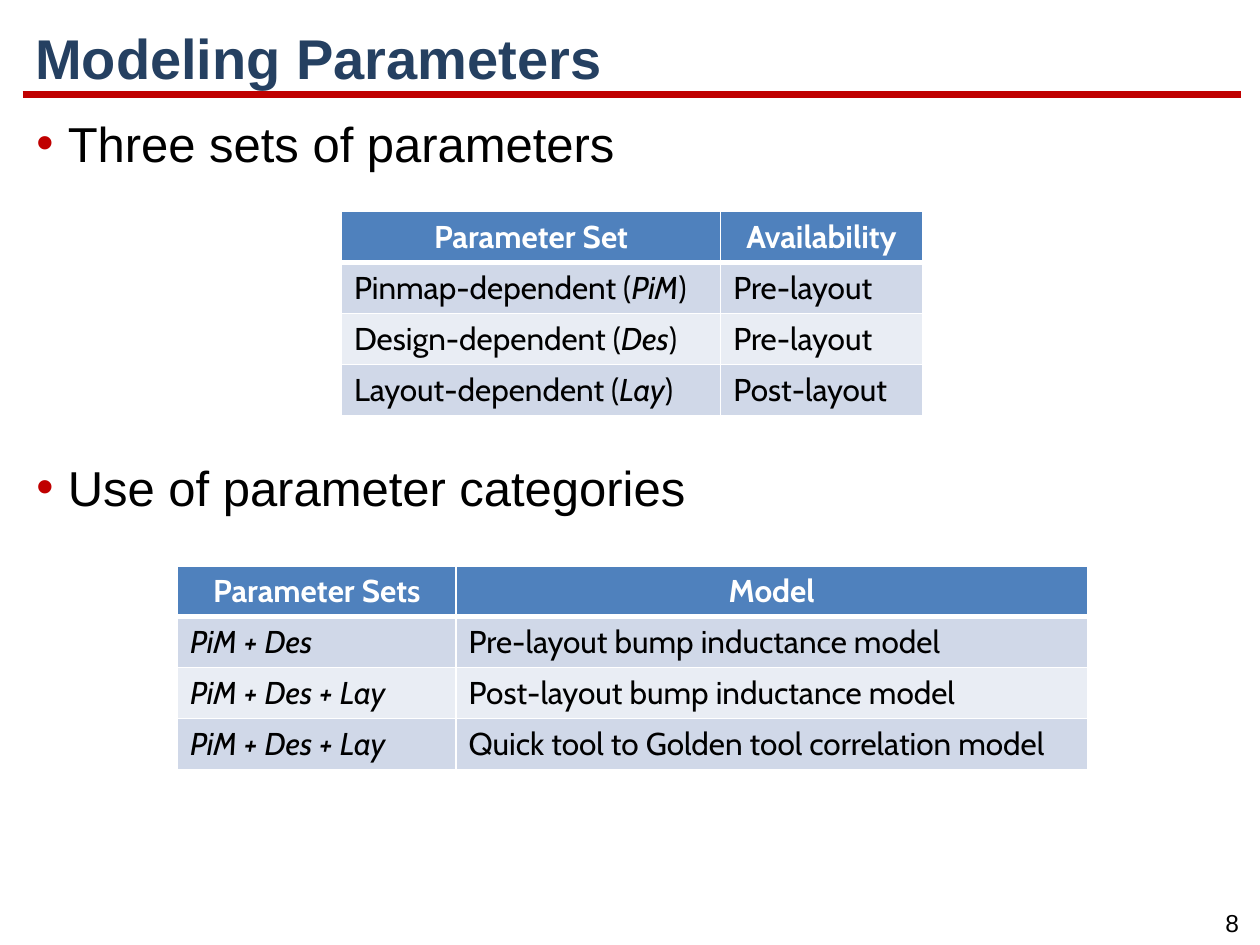
from lxml.etree import SubElement
from pptx import Presentation
from pptx.dml.color import RGBColor
from pptx.enum.shapes import MSO_CONNECTOR
from pptx.enum.text import MSO_ANCHOR, PP_ALIGN
from pptx.oxml.ns import qn
from pptx.util import Inches, Pt

NAVY = RGBColor(0x25, 0x40, 0x61)
RED = RGBColor(0xC0, 0x00, 0x00)
BLACK = RGBColor(0x00, 0x00, 0x00)
WHITE = RGBColor(0xFF, 0xFF, 0xFF)
HEADER_BLUE = RGBColor(0x4F, 0x81, 0xBD)
BAND_DARK = RGBColor(0xD0, 0xD8, 0xE8)
BAND_LIGHT = RGBColor(0xE9, 0xED, 0xF4)

ROW_HEIGHT = 0.405

# Parts between asterisks are set in italics
PARAMETER_SETS = [
    ("Parameter Set", "Availability"),
    ("Pinmap-dependent (*PiM*)", "Pre-layout"),
    ("Design-dependent (*Des*)", "Pre-layout"),
    ("Layout-dependent (*Lay*)", "Post-layout"),
]
MODELS = [
    ("Parameter Sets", "Model"),
    ("*PiM + Des*", "Pre-layout bump inductance model"),
    ("*PiM + Des + Lay*", "Post-layout bump inductance model"),
    ("*PiM + Des + Lay*", "Quick tool to Golden tool correlation model"),
]


def write_text(paragraph, text, size, font="Arial", color=BLACK, bold=False,
               align=PP_ALIGN.LEFT, line_spacing=None, space_before=0):
    paragraph.alignment = align
    paragraph.space_before = Pt(space_before)
    if line_spacing:
        paragraph.line_spacing = line_spacing
    for index, part in enumerate(text.split("*")):
        if part:
            run = paragraph.add_run()
            run.text = part
            run.font.name = font
            run.font.size = Pt(size)
            run.font.bold = bold
            run.font.italic = index % 2 == 1
            run.font.color.rgb = color


def add_title(slide, text):
    title = slide.shapes.title
    title.left, title.top = Inches(0.18), Inches(0.16)
    title.width, title.height = Inches(9.68), Inches(0.65)
    title.text_frame.vertical_anchor = MSO_ANCHOR.MIDDLE
    write_text(title.text_frame.paragraphs[0], text, 32, color=NAVY,
               bold=True, line_spacing=0.9)


def add_rule(slide):
    rule = slide.shapes.add_connector(
        MSO_CONNECTOR.STRAIGHT, Inches(0.18), Inches(0.75), Inches(9.85), Inches(0.75))
    rule.line.color.rgb = RED
    rule.line.width = Pt(4.5)
    SubElement(rule._element.spPr, qn("a:effectLst"))


def add_text_box(slide, left, top, width, height, wrap=True):
    box = slide.shapes.add_textbox(
        Inches(left), Inches(top), Inches(width), Inches(height))
    box.text_frame.word_wrap = wrap
    return box.text_frame


def add_bullet(paragraph):
    properties = paragraph._p.get_or_add_pPr()
    properties.set("marL", str(Inches(0.25)))
    properties.set("indent", str(-Inches(0.25)))
    color = SubElement(properties, qn("a:buClr"))
    SubElement(color, qn("a:srgbClr"), val=str(RED))
    SubElement(properties, qn("a:buFont"), typeface="Arial")
    SubElement(properties, qn("a:buChar"), char="•")


def add_bullets(slide, bullets):
    frame = add_text_box(slide, 0.19, 0.92, 9.66, 6.08)
    for index, (text, space_before) in enumerate(bullets):
        paragraph = frame.paragraphs[0] if index == 0 else frame.add_paragraph()
        write_text(paragraph, text, 28, line_spacing=0.85, space_before=space_before)
        add_bullet(paragraph)


def set_borders(cell, **widths):
    properties = cell._tc.get_or_add_tcPr()
    for side in ("L", "R", "T", "B"):
        line = SubElement(properties, qn(f"a:ln{side}"), w=str(Pt(widths.get(side, 1))))
        fill = SubElement(line, qn("a:solidFill"))
        SubElement(fill, qn("a:srgbClr"), val=str(WHITE))


def add_table(slide, left, top, column_widths, rows):
    table = slide.shapes.add_table(
        len(rows), len(column_widths), Inches(left), Inches(top),
        Inches(sum(column_widths)), Inches(ROW_HEIGHT * len(rows))).table
    for column, width in zip(table.columns, column_widths):
        column.width = Inches(width)
    for row_index, row in enumerate(rows):
        table.rows[row_index].height = Inches(ROW_HEIGHT)
        header = row_index == 0
        band = BAND_DARK if row_index % 2 else BAND_LIGHT
        # A thick line parts the header from the first row
        thick = {0: {"B": 3}, 1: {"T": 3}}.get(row_index, {})
        for column_index, text in enumerate(row):
            cell = table.cell(row_index, column_index)
            set_borders(cell, **thick)
            cell.fill.solid()
            cell.fill.fore_color.rgb = HEADER_BLUE if header else band
            write_text(cell.text_frame.paragraphs[0], text, 18, font="Cabin",
                       color=WHITE if header else BLACK, bold=header,
                       align=PP_ALIGN.CENTER if header else PP_ALIGN.LEFT)


def add_page_number(slide, number):
    frame = add_text_box(slide, 9.56, 7.16, 0.44, 0.34, wrap=False)
    write_text(frame.paragraphs[0], number, 14, align=PP_ALIGN.CENTER)


def main():
    presentation = Presentation()
    presentation.slide_width = Inches(10)
    presentation.slide_height = Inches(7.5)
    slide = presentation.slides.add_slide(presentation.slide_layouts[5])

    # Heading and page furniture
    add_rule(slide)
    add_page_number(slide, "8")
    add_title(slide, "Modeling Parameters")

    # Bullets, with room between them for the first table
    add_bullets(slide, [("Three sets of parameters", 2),
                        ("Use of parameter categories", 168)])

    # Tables
    add_table(slide, 1.41, 4.49, (2.21, 5.01), MODELS)
    add_table(slide, 2.71, 1.68, (3.01, 1.6), PARAMETER_SETS)

    presentation.save("out.pptx")


if __name__ == "__main__":
    main()
